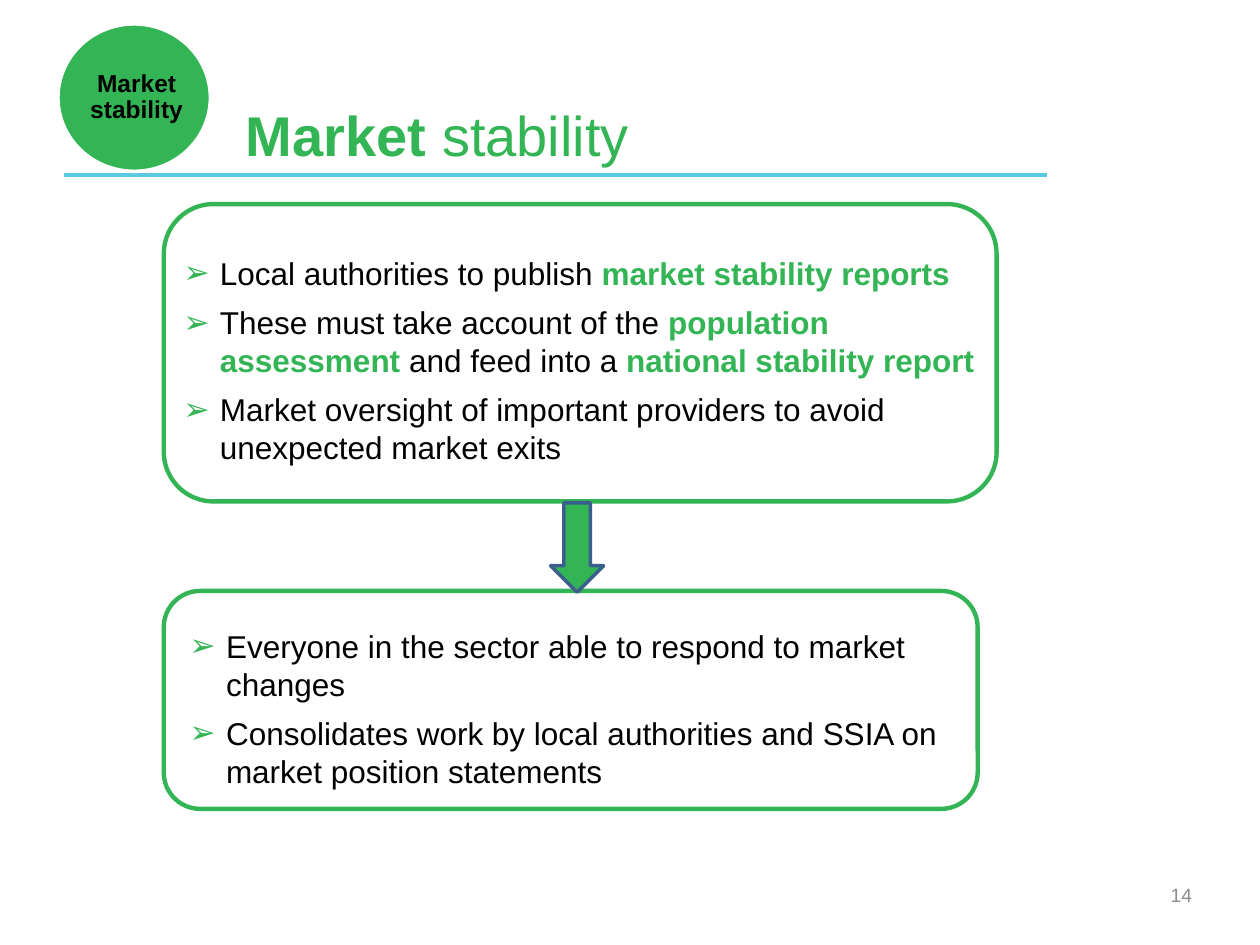
from pptx import Presentation
from pptx.dml.color import RGBColor
from pptx.enum.shapes import MSO_CONNECTOR, MSO_SHAPE as Shape
from pptx.enum.text import MSO_ANCHOR as Anchor, PP_ALIGN as Align
from pptx.oxml.ns import qn
from pptx.util import Inches, Pt
from lxml import etree

GREEN = "34B555"
BLACK = "000000"


def color(target, value):
    target.rgb = RGBColor.from_string(value)


def set_font(font, size, value, bold=False):
    font.name = "Arial"
    font.size = Pt(size)
    font.bold = bold
    color(font.color, value)


deck = Presentation()
deck.slide_width, deck.slide_height = Inches(10), Inches(7.5)
page = deck.slides.add_slide(deck.slide_layouts[5])

rule = page.shapes.add_connector(
    MSO_CONNECTOR.STRAIGHT, Inches(0.51), Inches(1.39), Inches(8.31), Inches(1.39))
color(rule.line.color, "5CC9E3")
rule.line.width = Pt(2)
etree.SubElement(rule.element.spPr, qn("a:effectLst"))

title = page.shapes.title
title.left, title.top = Inches(1.85), Inches(0.29)
title.width, title.height = Inches(6.46), Inches(1.09)
title.text_frame.vertical_anchor = Anchor.BOTTOM
para = title.text_frame.paragraphs[0]
para.alignment = Align.LEFT
set_font(para.font, 32, GREEN)
for text, bold in [("Market ", True), ("stability", False)]:
    span = para.add_run()
    span.text = text
    span.font.bold = bold

number = page.shapes.add_textbox(Inches(7.23), Inches(6.9), Inches(2.33), Inches(0.4))
number.text_frame.word_wrap = True
number.text_frame.vertical_anchor = Anchor.MIDDLE
para = number.text_frame.paragraphs[0]
para.text = "14"
para.alignment = Align.RIGHT
set_font(para.font, 11, "8C8C8C")

# Each bullet alternates plain and highlighted text.
panels = [
    (1.62, 6.61, 2.36, 0.04, 0.28, [
        ["Local authorities to publish ", "market stability reports"],
        ["These must take account of the ", "population assessment ",
         "and feed into a ", "national stability report"],
        ["Market oversight of important providers to avoid unexpected market exits"],
    ]),
    (4.69, 6.46, 1.73, 0.12, 0.2, [
        ["Everyone in the sector able to respond to market changes"],
        ["Consolidates work by local authorities and SSIA on market position statements"],
    ]),
]
for top, width, height, left_inset, top_inset, bullets in panels:
    panel = page.shapes.add_shape(
        Shape.ROUNDED_RECTANGLE, Inches(1.3), Inches(top), Inches(width), Inches(height))
    panel.shadow.inherit = False
    panel.fill.background()
    color(panel.line.color, GREEN)
    panel.line.width = Pt(2.5)
    frame = panel.text_frame
    frame.word_wrap = True
    frame.vertical_anchor = Anchor.TOP
    frame.margin_left, frame.margin_top = Inches(left_inset), Inches(top_inset)
    frame.margin_right = frame.margin_bottom = 0
    for index, parts in enumerate(bullets):
        para = frame.add_paragraph() if index else frame.paragraphs[0]
        para.alignment = Align.LEFT
        para.space_before = Pt(3.6 if index else 0)
        para.space_after = Pt(3)
        props = para._p.get_or_add_pPr()
        props.set("marL", str(Inches(0.29)))
        props.set("indent", str(Inches(-0.29)))
        bullet_color = etree.SubElement(props, qn("a:buClr"))
        etree.SubElement(bullet_color, qn("a:srgbClr"), val=GREEN)
        etree.SubElement(props, qn("a:buFont"), typeface="Arial")
        etree.SubElement(props, qn("a:buChar"), char="➢")
        set_font(para.font, 18, BLACK)
        for position, text in enumerate(parts):
            span = para.add_run()
            span.text = text
            if position % 2:
                span.font.bold = True
                color(span.font.color, GREEN)

arrow = page.shapes.add_shape(
    Shape.DOWN_ARROW, Inches(4.37), Inches(3.99), Inches(0.42), Inches(0.71))
badge = page.shapes.add_shape(
    Shape.OVAL, Inches(0.46), Inches(0.19), Inches(1.21), Inches(1.17))
for shape, outline in [(arrow, "3A5F8C"), (badge, "FFFFFF")]:
    shape.shadow.inherit = False
    shape.fill.solid()
    color(shape.fill.fore_color, GREEN)
    color(shape.line.color, outline)
    shape.line.width = Pt(2)

frame = badge.text_frame
frame.word_wrap = True
frame.vertical_anchor = Anchor.MIDDLE
frame.margin_left = Inches(0.04)
frame.margin_right = frame.margin_top = frame.margin_bottom = 0
para = frame.paragraphs[0]
para.text = "Market stability"
para.alignment = Align.CENTER
para.line_spacing = 0.9
set_font(para.font, 14, BLACK, True)

deck.save("out.pptx")
